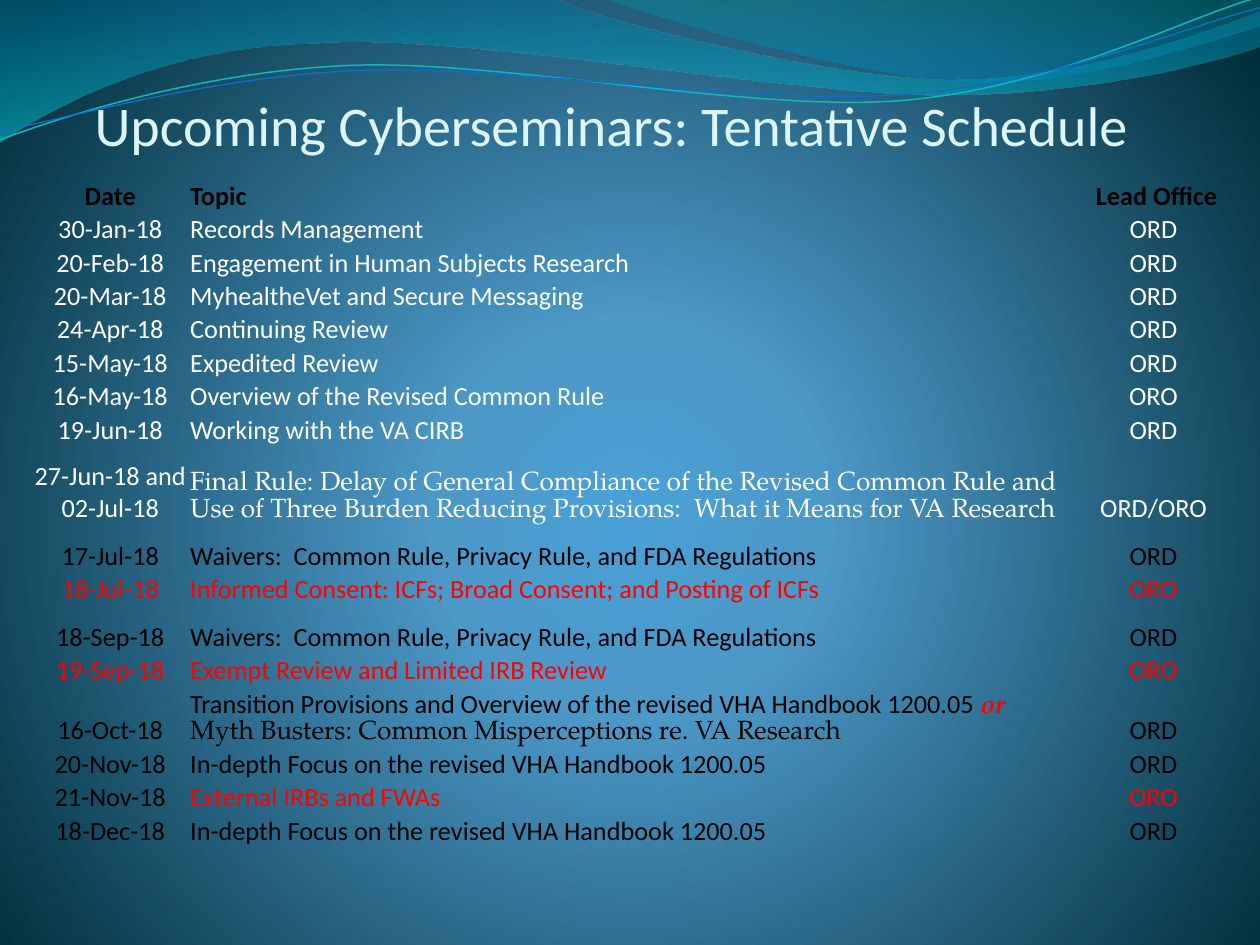
"""Build the slide with the tentative schedule of upcoming cyberseminars."""
from math import cos, radians, sin
from typing import NamedTuple

from pptx import Presentation
from pptx.dml.color import RGBColor
from pptx.enum.text import MSO_ANCHOR, MSO_AUTO_SIZE, PP_ALIGN
from pptx.oxml import parse_xml
from pptx.oxml.ns import nsdecls, qn
from pptx.util import Inches, Pt

BLACK = RGBColor(0x00, 0x00, 0x00)
WHITE = RGBColor(0xFF, 0xFF, 0xFF)
RED = RGBColor(0xFF, 0x00, 0x00)
PALE_CYAN = RGBColor(0xDB, 0xF5, 0xF9)
SKY = RGBColor(0x4A, 0xA0, 0xD6)
STEEL = RGBColor(0x4C, 0x98, 0xC7)
DEEP_SEA = RGBColor(0x00, 0x2C, 0x38)
OCEAN = RGBColor(0x00, 0x74, 0xA1)
TURQUOISE = RGBColor(0x00, 0xC6, 0xCF)
TEAL = RGBColor(0x00, 0xA1, 0xA9)
CERULEAN = RGBColor(0x00, 0x8B, 0xBF)
AQUA = RGBColor(0x0A, 0xB8, 0xBF)
ROYAL = RGBColor(0x0F, 0x6F, 0xC6)

SANS, SERIF = "Calibri", "TeX Gyre Pagella"
NO_STYLE_NO_GRID = "{2D5ABB26-0587-4C30-8999-92F81FD0307C}"
LINEAR_DOWN = '<a:lin ang="5400000" scaled="0"/>'
RADIAL = '<a:path path="circle"><a:fillToRect l="10000" t="110000" r="10000" b="100000"/></a:path>'

Point = tuple[float, float]


class Stop(NamedTuple):
    position: int
    color: RGBColor
    opacity: int = 100


class Wave(NamedTuple):
    frame: tuple[float, float, float, float]
    start: Point
    segments: list[tuple[Point, ...]]
    stops: tuple[Stop, ...] = ()
    stroke: RGBColor | None = None
    weight: float = 0
    tilt: float = 0


class Phrase(NamedTuple):
    text: str
    color: RGBColor
    font: str = SANS
    bold: bool = False
    italic: bool = False


class Seminar(NamedTuple):
    date: str
    topic: str
    office: str
    color: RGBColor
    height: float = 0.25
    date_color: RGBColor | None = None
    font: str = SANS
    bold: bool = False
    alternative: str = ""


WAVES = [
    Wave((-0.01, -0.01, 10.02, 1.14), (0, 0), [
        ((4.4, -0.01),),
        ((4.76, 0.17), (6.64, 0.63), (7.58, 0.63)),
        ((8.53, 0.63), (9.58, 0.26), (10, 0.09)),
        ((10.01, 0.36),),
        ((9.83, 0.44), (8.7, 0.76), (7.46, 0.75)),
        ((6.22, 0.75), (3.82, 0.28), (2.57, 0.34)),
        ((1.29, 0.36), (0.46, 0.83), (-0.01, 1.13)),
        ((0, 0),),
    ], (Stop(0, OCEAN, 45), Stop(100, TURQUOISE, 55))),
    Wave((4.79, -0.01, 5.21, 0.7), (4.79, -0.01), [
        ((5.09, 0.11), (6.82, 0.62), (7.69, 0.65)),
        ((8.56, 0.69), (9.61, 0.32), (10, 0.21)),
        ((10, 0),),
        ((4.79, -0.01),),
    ], (Stop(0, TEAL, 30), Stop(80, CERULEAN, 45))),
    Wave((-0.02, 0.22, 10.02, 0.71), (0, 1.11), [
        ((0.48, 0.93), (1.58, 0.57), (2.77, 0.52)),
        ((3.95, 0.47), (5.93, 0.89), (7.13, 0.8)),
        ((8.33, 0.71), (9.38, 0.15), (9.98, -0.02)),
    ], stroke=AQUA, weight=0.85, tilt=-2.7),
    Wave((-0.02, 0.3, 10.03, 0.58), (0, 1.04), [
        ((0.47, 0.96), (1.64, 0.61), (2.83, 0.56)),
        ((4.03, 0.51), (5.97, 0.84), (7.17, 0.75)),
        ((8.36, 0.67), (9.41, 0.21), (10, 0.06)),
    ], stroke=ROYAL, weight=0.75, tilt=-2.7),
]

SCHEDULE = [
    Seminar("Date", "Topic", " Lead Office", BLACK, 0, bold=True),
    Seminar("30-Jan-18", "Records Management", "ORD", WHITE),
    Seminar("20-Feb-18", "Engagement in Human Subjects Research", "ORD", WHITE),
    Seminar("20-Mar-18", "MyhealtheVet and Secure Messaging", "ORD", WHITE),
    Seminar("24-Apr-18", "Continuing Review", "ORD", WHITE),
    Seminar("15-May-18", "Expedited Review", "ORD", WHITE),
    Seminar("16-May-18", "Overview of the Revised Common Rule", "ORO", WHITE),
    Seminar("19-Jun-18", "Working with the VA CIRB", "ORD", WHITE),
    Seminar("27-Jun-18 and \n02-Jul-18",
            "Final Rule: Delay of General Compliance of the Revised Common Rule and "
            "Use of Three Burden Reducing Provisions:  What it Means for VA Research",
            "ORD/ORO", WHITE, 0.62, font=SERIF),
    Seminar("17-Jul-18", "Waivers:  Common Rule, Privacy Rule, and FDA Regulations", "ORD", BLACK, 0.38),
    Seminar("18-Jul-18", "Informed Consent: ICFs; Broad Consent; and Posting of ICFs", "ORO", RED),
    Seminar("18-Sep-18", "Waivers:  Common Rule, Privacy Rule, and FDA Regulations", "ORD", BLACK, 0.38),
    Seminar("19-Sep-18", "Exempt Review and Limited IRB Review", "ORO", RED),
    Seminar("16-Oct-18", "Transition Provisions and Overview of the revised VHA Handbook 1200.05 ", "ORD",
            BLACK, 0.42, alternative="Myth Busters: Common Misperceptions re. VA Research"),
    Seminar("20-Nov-18", "In-depth Focus on the revised VHA Handbook 1200.05", "ORD", BLACK),
    Seminar("21-Nov-18", "External IRBs and FWAs", "ORO", RED, date_color=BLACK),
    Seminar("18-Dec-18", "In-depth Focus on the revised VHA Handbook 1200.05", "ORD", BLACK),
]


def paint_gradient(owner, stops: tuple[Stop, ...], direction: str) -> None:
    solid = owner.find(".//" + qn("a:solidFill"))
    marks = "".join(
        f'<a:gs pos="{stop.position * 1000}"><a:srgbClr val="{stop.color}">'
        + (f'<a:alpha val="{stop.opacity * 1000}"/>' if stop.opacity < 100 else "")
        + "</a:srgbClr></a:gs>" for stop in stops)
    gradient = parse_xml(f'<a:gradFill {nsdecls("a")} rotWithShape="1"><a:gsLst>{marks}</a:gsLst>{direction}</a:gradFill>')
    solid.getparent().replace(solid, gradient)


def curve_markup(wave: Wave) -> str:
    left, top, width, height = wave.frame
    turn = radians(-wave.tilt)

    def point(position: Point) -> str:
        dx, dy = position[0] - left - width / 2, position[1] - top - height / 2
        x = Inches(width / 2 + dx * cos(turn) - dy * sin(turn))
        y = Inches(height / 2 + dx * sin(turn) + dy * cos(turn))
        return f'<a:pt x="{x}" y="{y}"/>'

    markup = f"<a:moveTo>{point(wave.start)}</a:moveTo>"
    for segment in wave.segments:
        tag = "lnTo" if len(segment) == 1 else "cubicBezTo"
        markup += f"<a:{tag}>{''.join(map(point, segment))}</a:{tag}>"
    closing, fill = ("<a:close/>", "norm") if wave.stops else ("", "none")
    return (f'<a:path {nsdecls("a")} w="{Inches(width)}" h="{Inches(height)}" fill="{fill}">'
            f"{markup}{closing}</a:path>")


def draw_wave(slide, wave: Wave) -> None:
    builder = slide.shapes.build_freeform(*map(Inches, wave.start))
    builder.add_line_segments([tuple(map(Inches, segment[-1])) for segment in wave.segments], close=False)
    ribbon = builder.convert_to_shape()
    outline = ribbon._element.find(".//" + qn("a:path"))
    outline.getparent().replace(outline, parse_xml(curve_markup(wave)))
    ribbon.left, ribbon.top, ribbon.width, ribbon.height = map(Inches, wave.frame)
    ribbon.rotation = wave.tilt
    ribbon.shadow.inherit = False
    if wave.stops:
        ribbon.line.fill.background()
        ribbon.fill.solid()
        paint_gradient(ribbon._element, wave.stops, LINEAR_DOWN)
    else:
        ribbon.fill.background()
        ribbon.line.color.rgb = wave.stroke
        ribbon.line.width = Pt(wave.weight)


def write_cell(cell, lines: list[list[Phrase]], alignment: PP_ALIGN) -> None:
    cell.vertical_anchor = MSO_ANCHOR.BOTTOM
    cell.fill.background()
    cell.margin_left = cell.margin_right = cell.margin_top = Inches(0.01)
    cell.margin_bottom = 0
    cell.text_frame.text = "\n".join("" for _ in lines)
    for paragraph, phrases in zip(cell.text_frame.paragraphs, lines):
        paragraph.alignment = alignment
        for phrase in phrases:
            run = paragraph.add_run()
            run.text = phrase.text
            run.font.size, run.font.name = Pt(15), phrase.font
            run.font.bold, run.font.italic = phrase.bold, phrase.italic
            run.font.color.rgb = phrase.color


def draw_schedule(slide, seminars: list[Seminar]) -> None:
    frame = slide.shapes.add_table(len(seminars), 3, Inches(0.25), Inches(1.42), Inches(9.58), Inches(5.28))
    table = frame.table
    table.first_row = table.horz_banding = False
    table._tbl.tblPr.find(qn("a:tableStyleId")).text = NO_STYLE_NO_GRID
    for column, width in zip(table.columns, (1.25, 6.98, 1.35)):
        column.width = Inches(width)
    for row, seminar in zip(table.rows, seminars):
        row.height = Inches(seminar.height)
        date_color = seminar.date_color or seminar.color
        dates = [[Phrase(day, date_color, bold=seminar.bold)] for day in seminar.date.split("\n")]
        topics = [[Phrase(seminar.topic, seminar.color, seminar.font, seminar.bold)]]
        if seminar.alternative:
            topics[0].append(Phrase("or", RED, SERIF, True, True))
            topics.append([Phrase(seminar.alternative, seminar.color, SERIF)])
        office = [[Phrase(seminar.office, seminar.color, bold=seminar.bold)]]
        for cell, lines, alignment in zip(row.cells, (dates, topics, office),
                                          (PP_ALIGN.CENTER, PP_ALIGN.LEFT, PP_ALIGN.CENTER)):
            write_cell(cell, lines, alignment)
    frame.height = Inches(5.28)


def place_title(slide, wording: str) -> None:
    title = slide.shapes.title
    slide.shapes._spTree.append(title._element)
    title.left, title.top, title.width, title.height = map(Inches, (0.75, 0.5, 8.75, 0.75))
    text = title.text_frame
    text.text = wording
    text.auto_size = MSO_AUTO_SIZE.NONE
    text.vertical_anchor = MSO_ANCHOR.BOTTOM
    text.margin_left = text.margin_right = text.margin_bottom = 0
    text.margin_top = Inches(0.05)
    heading = text.paragraphs[0]
    heading.alignment = PP_ALIGN.LEFT
    font = heading.runs[0].font
    font.size, font.name = Pt(32), SANS
    font.color.rgb = PALE_CYAN


def main() -> None:
    deck = Presentation()
    deck.slide_width, deck.slide_height = Inches(10), Inches(7.5)
    slide = deck.slides.add_slide(deck.slide_layouts[5])
    slide.background.fill.solid()
    paint_gradient(slide._element, (Stop(0, SKY), Stop(25, STEEL), Stop(100, DEEP_SEA)), RADIAL)
    for wave in WAVES:
        draw_wave(slide, wave)
    place_title(slide, "Upcoming Cyberseminars: Tentative Schedule")
    draw_schedule(slide, SCHEDULE)
    deck.save("out.pptx")


if __name__ == "__main__":
    main()
